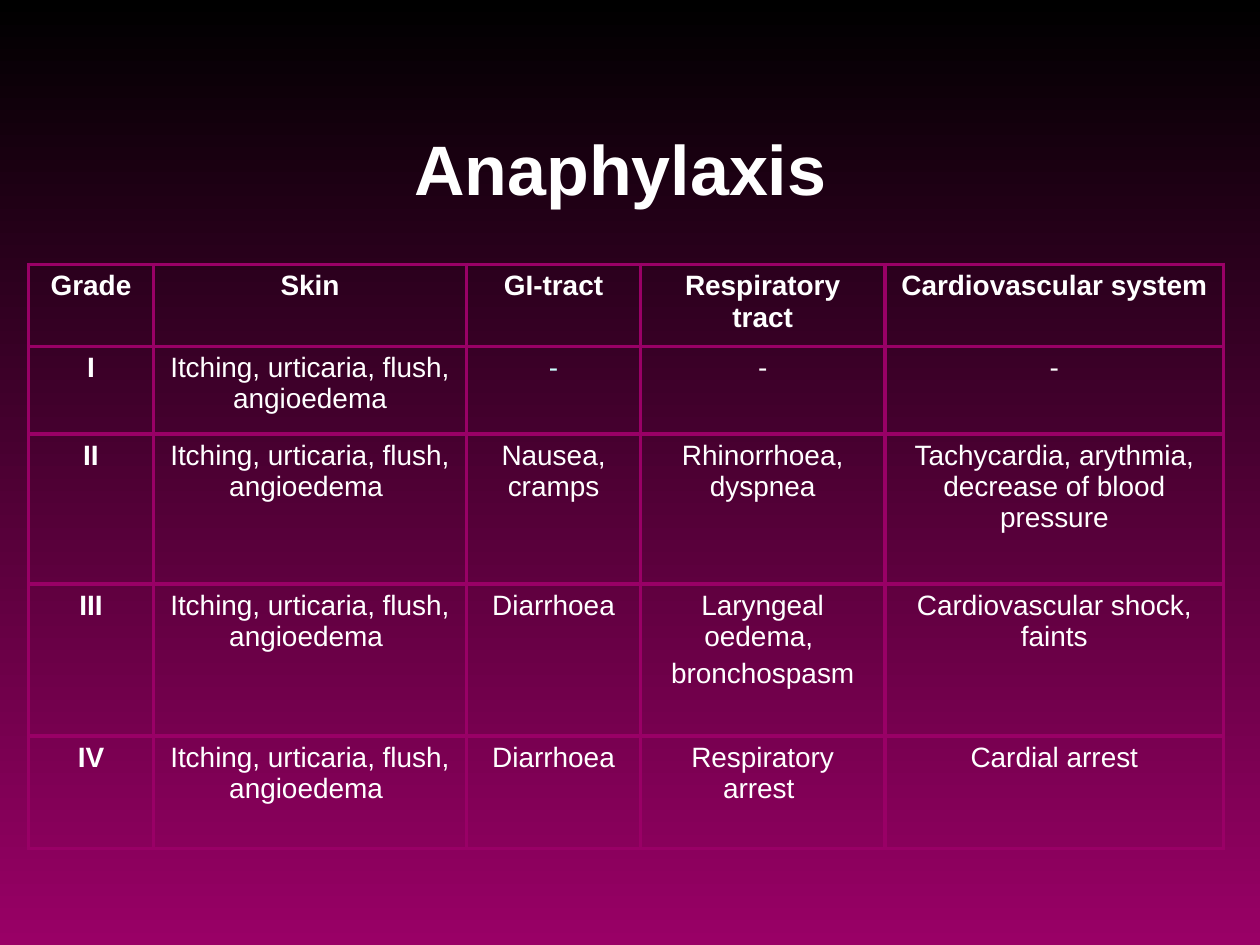
"""Build the slide with the table of anaphylaxis grades."""
from typing import NamedTuple

from lxml.etree import SubElement
from pptx import Presentation
from pptx.dml.color import RGBColor
from pptx.enum.text import MSO_ANCHOR, MSO_AUTO_SIZE, PP_ALIGN
from pptx.oxml.ns import qn
from pptx.util import Cm, Pt

WHITE, PALE, MAGENTA, BLACK = "FFFFFF", "CCFFFF", "990066", "000000"
COL_WIDTHS = [2.51, 6.32, 3.5, 4.93, 6.83]
ROW_HEIGHTS = [1.65, 1.77, 3.02, 3.07, 2.26]
SYMPTOMS = "Itching, urticaria, flush, angioedema"


class Grade(NamedTuple):
    grade: str
    skin: str
    gi: str
    respiratory: str
    cardiovascular: str


ROWS = [
    Grade("Grade", "Skin", "GI-tract", "Respiratory tract", "Cardiovascular system"),
    Grade("I", SYMPTOMS, "-", "-", "-"),
    Grade("II", SYMPTOMS + " ", "Nausea, cramps", "Rhinorrhoea, dyspnea",
          "Tachycardia, arythmia, decrease of blood pressure"),
    Grade("III", SYMPTOMS + " ", "Diarrhoea", "Laryngeal oedema, \nbronchospasm",
          "Cardiovascular shock, faints"),
    Grade("IV", SYMPTOMS + " ", "Diarrhoea", "Respiratory arrest ", "Cardial arrest"),
]


def rgb(value: str) -> RGBColor:
    return RGBColor.from_string(value)


def write(tf, text: str, *, size: float = 16, bold: bool = False,
          color: str = WHITE, before: float = 0) -> None:
    for i, line in enumerate(text.split("\n")):
        p = tf.add_paragraph() if i else tf.paragraphs[0]
        p.alignment = PP_ALIGN.CENTER
        p.space_before = Pt(before)
        r = p.add_run()
        r.text = line
        r.font.name = "Arial"
        r.font.size = Pt(size)
        r.font.bold = bold
        r.font.color.rgb = rgb(color)


def add_borders(cell, color: str, width: float) -> None:
    tc_pr = cell._tc.get_or_add_tcPr()
    for side in ("lnL", "lnR", "lnT", "lnB"):
        ln = SubElement(tc_pr, qn(f"a:{side}"), w=str(Pt(width)))
        fill = SubElement(ln, qn("a:solidFill"))
        SubElement(fill, qn("a:srgbClr"), val=color)


def paint_background(s) -> None:
    fill = s.background.fill
    fill.gradient()
    fill.gradient_angle = 270
    for stop, color, position in zip(fill.gradient_stops, (BLACK, MAGENTA), (0, 1)):
        stop.color.rgb = rgb(color)
        stop.position = position


def add_title(s, text: str, width: int) -> None:
    sp = s.shapes.title
    sp.left, sp.top, sp.width, sp.height = 0, Cm(2.4), width, Cm(1.96)
    tf = sp.text_frame
    tf.word_wrap = True
    tf.auto_size = MSO_AUTO_SIZE.SHAPE_TO_FIT_TEXT
    tf.vertical_anchor = MSO_ANCHOR.BOTTOM
    write(tf, text, size=40, bold=True)


def add_grades(s, rows: list[Grade]) -> None:
    table = s.shapes.add_table(len(rows), len(COL_WIDTHS), Cm(0.58), Cm(5.33),
                               Cm(sum(COL_WIDTHS)), Cm(sum(ROW_HEIGHTS))).table
    table.first_row = table.horz_banding = False
    for column, width in zip(table.columns, COL_WIDTHS):
        column.width = Cm(width)
    for i, (row, height, values) in enumerate(zip(table.rows, ROW_HEIGHTS, rows)):
        row.height = Cm(height)
        for j, (cell, text) in enumerate(zip(row.cells, values)):
            add_borders(cell, MAGENTA, 2.25)
            cell.fill.background()
            write(cell.text_frame, text, bold=i == 0 or j == 0, before=3.2,
                  color=PALE if (i, j) == (1, 2) else WHITE)


def main() -> None:
    prs = Presentation()
    prs.slide_width, prs.slide_height = Cm(25.4), Cm(19.05)
    s = prs.slides.add_slide(prs.slide_layouts[5])
    paint_background(s)
    add_title(s, "Anaphylaxis ", prs.slide_width)
    add_grades(s, ROWS)
    prs.save("out.pptx")


if __name__ == "__main__":
    main()
